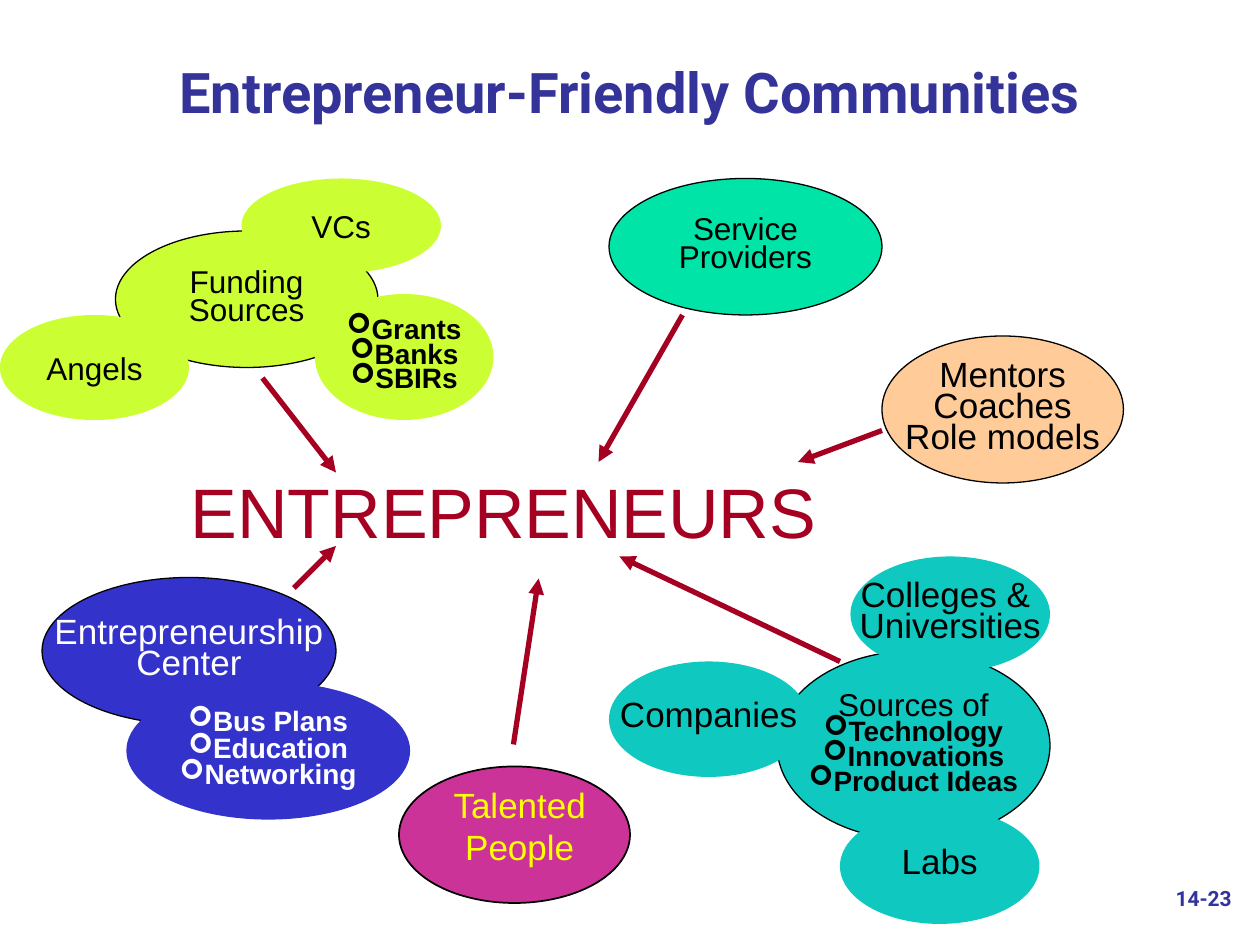
from lxml import etree
from pptx import Presentation
from pptx.dml.color import RGBColor
from pptx.enum.shapes import MSO_CONNECTOR as LINE, MSO_SHAPE as SHAPE
from pptx.enum.text import MSO_ANCHOR as ANCHOR, PP_ALIGN as ALIGN
from pptx.oxml.ns import qn
from pptx.util import Inches, Pt

# The grid has 12 columns and 12 rows to the inch: 120 by 90 cells
COLUMNS, ROWS, PER_INCH = 120, 90, 12

NAVY = RGBColor(0x33, 0x33, 0x99)
BLUE = RGBColor(0x33, 0x33, 0xCC)
GREEN = RGBColor(0x00, 0xE4, 0xA8)
LIME = RGBColor(0xCC, 0xFF, 0x33)
PEACH = RGBColor(0xFF, 0xCC, 0x99)
TEAL = RGBColor(0x0F, 0xC9, 0xC0)
MAGENTA = RGBColor(0xCC, 0x33, 0x99)
YELLOW = RGBColor(0xFF, 0xFF, 0x00)
CRIMSON = RGBColor(0xA5, 0x00, 0x21)
BLACK = RGBColor(0x00, 0x00, 0x00)
WHITE = RGBColor(0xFF, 0xFF, 0xFF)


def cells(*counts):
    return [Inches(count / PER_INCH) for count in counts]


def within(box, left, top, width, height):
    """Move a part's place from its region to the slide."""
    return box[0] + left, box[1] + top, width, height


def add_bullet(para):
    props = para._p.get_or_add_pPr()
    props.set("marL", "0")
    props.set("indent", "0")
    etree.SubElement(props, qn("a:buFont")).set("typeface", "Wingdings")
    etree.SubElement(props, qn("a:buChar")).set("char", "➢")


def write(frame, lines, size, color, font="Arial", bold=False, align=ALIGN.CENTER,
          spacing=None, bullets=False, plain_first=None):
    """Fill a frame; plain_first is the size of an unbulleted heading line."""
    for index, line in enumerate(lines):
        para = frame.paragraphs[0] if index == 0 else frame.add_paragraph()
        heading = plain_first is not None and index == 0
        para.alignment = align
        if spacing:
            para.line_spacing = spacing
        if index:
            para.space_before = Pt(size * 0.05)
        if bullets and not heading:
            add_bullet(para)
        span = para.add_run()
        span.text = line
        span.font.color.rgb = color
        formats = {"name": font, "size": Pt(plain_first if heading else size),
                   "bold": bold and not heading}
        for name, value in formats.items():
            setattr(span.font, name, value)


def add_text(page, box, lines, size, color, anchor=ANCHOR.TOP, **style):
    frame = page.shapes.add_textbox(*cells(*box)).text_frame
    frame.word_wrap = True
    frame.vertical_anchor = anchor
    write(frame, lines, size, color, **style)


def add_ellipse(page, box, fill, lines=(), size=18, color=BLACK, outline=None,
                weight=0.75, spacing=0.7, **style):
    oval = page.shapes.add_shape(SHAPE.OVAL, *cells(*box))
    oval.shadow.inherit = False
    oval.fill.solid()
    oval.fill.fore_color.rgb = fill
    if outline is None:
        oval.line.fill.background()
    else:
        oval.line.color.rgb = outline
        oval.line.width = Pt(weight)
    frame = oval.text_frame
    frame.word_wrap = False
    frame.vertical_anchor = ANCHOR.MIDDLE
    write(frame, lines, size, color, spacing=spacing, **style)


def add_arrow(page, box, start, end):
    points = [box[axis] + point[axis] for point in (start, end) for axis in (0, 1)]
    arrow = page.shapes.add_connector(LINE.STRAIGHT, *cells(*points))
    arrow.line.color.rgb = CRIMSON
    arrow.line.width = Pt(3)
    etree.SubElement(arrow.line._get_or_add_ln(), qn("a:tailEnd")).set("type", "triangle")
    etree.SubElement(arrow._element.spPr, qn("a:effectLst"))


def add_title(page, box):
    add_text(page, box, ["Entrepreneur-Friendly Communities"], 32, NAVY,
             anchor=ANCHOR.BOTTOM, font="Roboto", bold=True)


def add_page_number(page, box):
    add_text(page, box, ["14-23"], 12, NAVY, font="Roboto", bold=True, align=ALIGN.RIGHT)


def add_funding(page, box):
    add_ellipse(page, within(box, 11, 5, 25, 13), LIME, ["Funding", "Sources"], outline=BLACK)
    add_ellipse(page, within(box, 23, 0, 19, 9), LIME, ["VCs"], spacing=None)
    add_ellipse(page, within(box, 0, 13, 18, 10), LIME, ["Angels"], spacing=None)
    add_ellipse(page, within(box, 30, 11, 17, 12), LIME, ["Grants", "Banks", "SBIRs"],
                size=16, bold=True, bullets=True)


def add_center(page, box):
    add_ellipse(page, within(box, 0, 0, 28, 14), BLUE, ["Entrepreneurship", "Center"],
                size=20, color=WHITE, outline=BLACK)
    add_ellipse(page, within(box, 8.1, 10, 26.9, 13), BLUE,
                ["Bus Plans", "Education", "Networking"], size=16, color=WHITE,
                outline=BLUE, spacing=0.75, bold=True, bullets=True)


def add_technology(page, box):
    add_ellipse(page, within(box, 16, 9, 26, 18), TEAL,
                ["Sources of", "Technology", "Innovations", "Product Ideas"], size=16,
                outline=BLACK, bold=True, bullets=True, plain_first=18)
    partners = [(23, 0, ["Colleges & ", "Universities"]),
                (0, 10, ["Companies"]),
                (22, 24, ["Labs"])]
    for left, top, lines in partners:
        add_ellipse(page, within(box, left, top, 19, 11), TEAL, lines, size=20)


def add_providers(page, box):
    add_ellipse(page, box, GREEN, ["Service", "Providers"], outline=BLACK)


def add_mentors(page, box):
    add_ellipse(page, box, PEACH, ["Mentors", "Coaches", "Role models"], size=20,
                outline=BLACK)


def add_talent(page, box):
    add_ellipse(page, box, MAGENTA, outline=BLACK, weight=1)
    add_text(page, within(box, 1, 1, 21, 9.25), ["Talented People"], 20, YELLOW)


def add_hub(page, box):
    """The central word and the arrows that point to it."""
    add_text(page, within(box, 0, 8, 66, 9.25), ["ENTREPRENEURS"], 40, CRIMSON,
             align=ALIGN.LEFT)
    arrows = [((11, 20), (15, 16)),          # center
              ((8, 0), (15, 9)),             # funding
              ((48, -6), (40, 8)),           # providers
              ((67, 5), (59, 8)),            # mentors
              ((63, 27), (42, 17)),          # technology
              ((31.9, 34.9), (34.3, 19.1))]  # talent
    for start, end in arrows:
        add_arrow(page, box, start, end)


def main():
    deck = Presentation()
    deck.slide_width, deck.slide_height = cells(COLUMNS, ROWS)
    page = deck.slides.add_slide(deck.slide_layouts[6])
    regions = [(add_page_number, (100, 83.75, 18.5, 6.25)),
               (add_title, (5, 1.5, 110, 11)),
               (add_providers, (58, 17, 26, 13)),
               (add_center, (4, 55, 28, 23)),
               (add_funding, (0, 17, 47, 23)),
               (add_mentors, (84, 32, 23, 14)),
               (add_technology, (58, 53, 42, 35)),
               (add_talent, (38, 73, 22, 13)),
               (add_hub, (17, 36, 67, 35))]
    for add_region, box in regions:
        add_region(page, box)
    deck.save("out.pptx")


if __name__ == "__main__":
    main()
